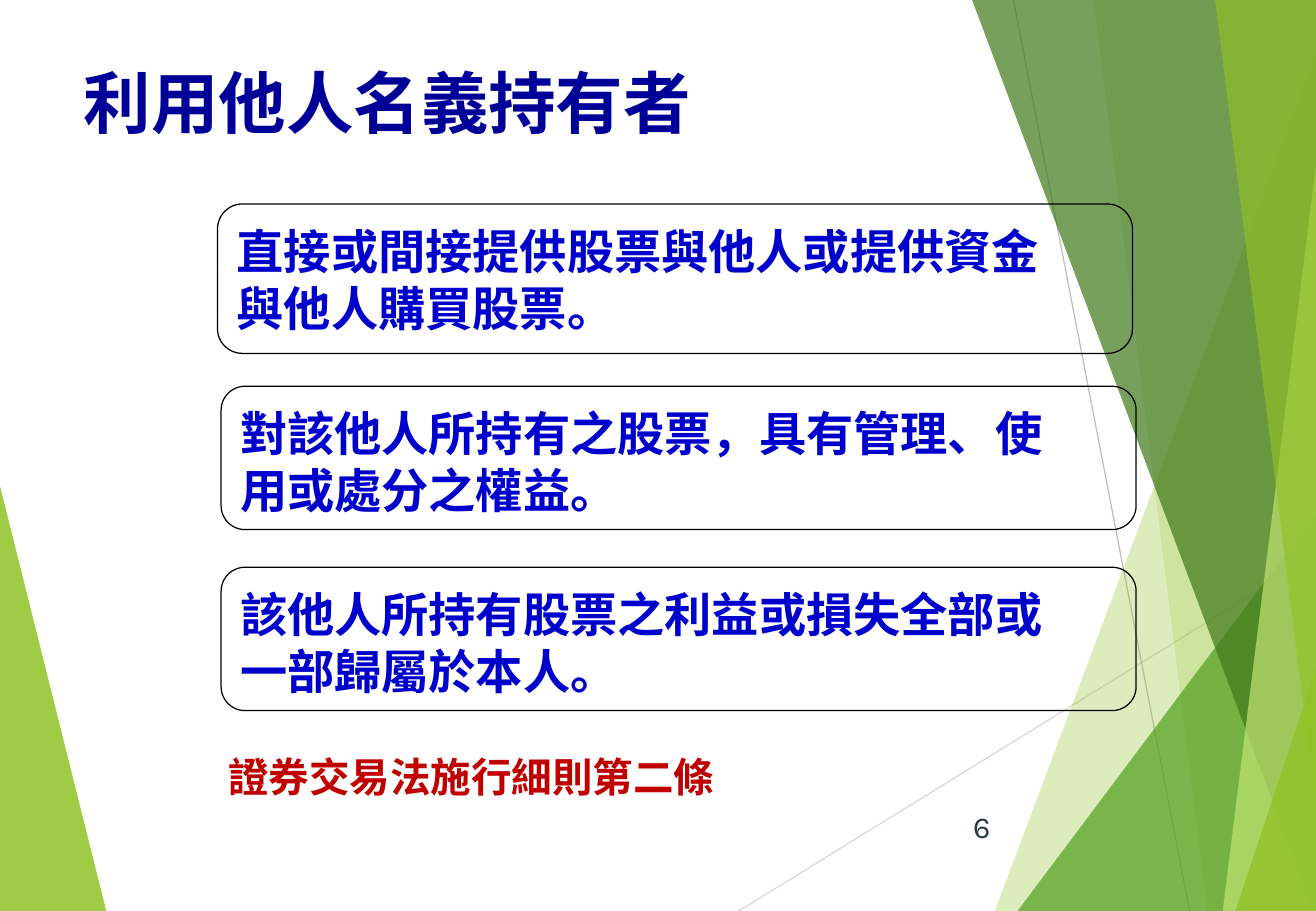
from lxml import etree
from pptx import Presentation
from pptx.dml.color import RGBColor
from pptx.enum.shapes import MSO_CONNECTOR, MSO_SHAPE
from pptx.enum.text import MSO_ANCHOR, MSO_AUTO_SIZE, PP_ALIGN
from pptx.oxml.ns import qn
from pptx.util import Inches, Pt

LINE = MSO_CONNECTOR.STRAIGHT
ROUND = MSO_SHAPE.ROUNDED_RECTANGLE
TOP = MSO_ANCHOR.TOP
MIDDLE = MSO_ANCHOR.MIDDLE
FIXED = MSO_AUTO_SIZE.NONE
LEFT = PP_ALIGN.LEFT
RIGHT = PP_ALIGN.RIGHT
WIDE, HIGH = 10.83, 7.5
HAN = "Noto Sans CJK SC"

RAYS = [
    ("D9D9D9", (6.08, HIGH), (WIDE, 4.57)),
    ("BFBFBF", (8.34, 0), (9.79, HIGH)),
]
SHARDS = [
    ("90C226", 85, [(0, 4.39), (0.53, HIGH), (0, HIGH)]),
    ("90C226", 30, [(10.56, 0), (8.16, HIGH), (WIDE, HIGH), (WIDE, 0)]),
    ("90C226", 20, [(8.54, 0), (9.96, HIGH), (WIDE, HIGH), (WIDE, 0)]),
    ("54A021", 72, [(7.86, HIGH), (WIDE, 4.29), (WIDE, HIGH)]),
    ("3F7819", 70, [(8.31, 0), (10.51, HIGH), (WIDE, HIGH), (WIDE, 0)]),
    ("C0E474", 70, [(10.63, 0), (9.83, HIGH), (WIDE, HIGH), (WIDE, 0)]),
    ("90C226", 65, [(9.57, 0), (10.68, HIGH), (WIDE, HIGH), (WIDE, 0)]),
    ("90C226", 80, [(9.55, HIGH), (WIDE, 5.35), (WIDE, HIGH)]),
]
RULES = [
    ((1.79, 1.68, 7.53, 1.23),
     ["直接或間接提供股票與他人或提供資金", "與他人購買股票。"]),
    ((1.82, 3.18, 7.53, 1.18),
     ["對該他人所持有之股票，具有管理、使", "用或處分之權益。"]),
    ((1.82, 4.67, 7.53, 1.18),
     ["該他人所持有股票之利益或損失全部或", "一部歸屬於本人。"]),
]


def paint(part, tint):
    part.rgb = RGBColor.from_string(tint)


def write(shape, lines, size, tint, pitch, inset, font=HAN, bold=True,
          align=LEFT, anchor=TOP):
    frame = shape.text_frame
    frame.auto_size = FIXED
    frame.word_wrap = True
    frame.vertical_anchor = anchor
    frame.margin_top = Inches(inset)
    for i, line in enumerate(lines):
        para = frame.add_paragraph() if i else frame.paragraphs[0]
        para.alignment = align
        para.line_spacing = Pt(pitch)
        para.space_before = Pt(0)
        run = para.add_run()
        run.text = line
        run.font.name = font
        run.font.size = Pt(size)
        run.font.bold = bold
        paint(run.font.color, tint)
        east = etree.SubElement(run.font._element, qn("a:ea"))
        east.set("typeface", font)


def draw_ray(slide, tint, start, end):
    ends = [Inches(v) for v in start + end]
    ray = slide.shapes.add_connector(LINE, *ends)
    paint(ray.line.color, tint)
    ray.line.width = Pt(0.75)
    etree.SubElement(ray._element.spPr, qn("a:effectLst"))


def draw_shard(slide, tint, alpha, points):
    pen = slide.shapes.build_freeform(*points[0], scale=Inches(1))
    pen.add_line_segments(points[1:])
    shard = pen.convert_to_shape()
    shard.shadow.inherit = False
    shard.line.fill.background()
    shard.fill.solid()
    paint(shard.fill.fore_color, tint)
    hue = shard._element.spPr.find(qn("a:solidFill"))[0]
    etree.SubElement(hue, qn("a:alpha")).set("val", str(alpha * 1000))


def add_decor(slide):
    draw_shard(slide, *SHARDS[0])
    for ray in RAYS:
        draw_ray(slide, *ray)
    for shard in SHARDS[1:]:
        draw_shard(slide, *shard)


def add_title(slide, box, text):
    title = slide.shapes.title
    title.left, title.top, title.width, title.height = map(Inches, box)
    write(title, [text], 40, "000099", 48, 0.11)


def add_rule(slide, box, lines):
    rule = slide.shapes.add_shape(ROUND, *map(Inches, box))
    rule.shadow.inherit = False
    rule.fill.background()
    paint(rule.line.color, "000000")
    rule.line.width = Pt(0.75)
    write(rule, lines, 28, "0000CC", 33.8, 0.09)


def add_note(slide, box, text):
    note = slide.shapes.add_textbox(*map(Inches, box))
    write(note, [text], 24, "C00000", 29, 0.08)


def add_page(slide, box, text):
    page = slide.shapes.add_textbox(*map(Inches, box))
    write(page, [text], 18, "2C3C43", 21, 0.05, "Karla", False, RIGHT, MIDDLE)


def main():
    deck = Presentation()
    deck.slide_width, deck.slide_height = Inches(WIDE), Inches(HIGH)
    slide = deck.slides.add_slide(deck.slide_layouts[5])
    add_decor(slide)
    add_page(slide, (7.64, 6.61, 0.61, 0.4), "6")
    add_title(slide, (0.59, 0.39, 10.3, 1.25), "利用他人名義持有者")
    for box, lines in RULES:
        add_rule(slide, box, lines)
    add_note(slide, (1.78, 6.11, 8.55, 0.51), "證券交易法施行細則第二條")
    deck.save("out.pptx")


if __name__ == "__main__":
    main()
